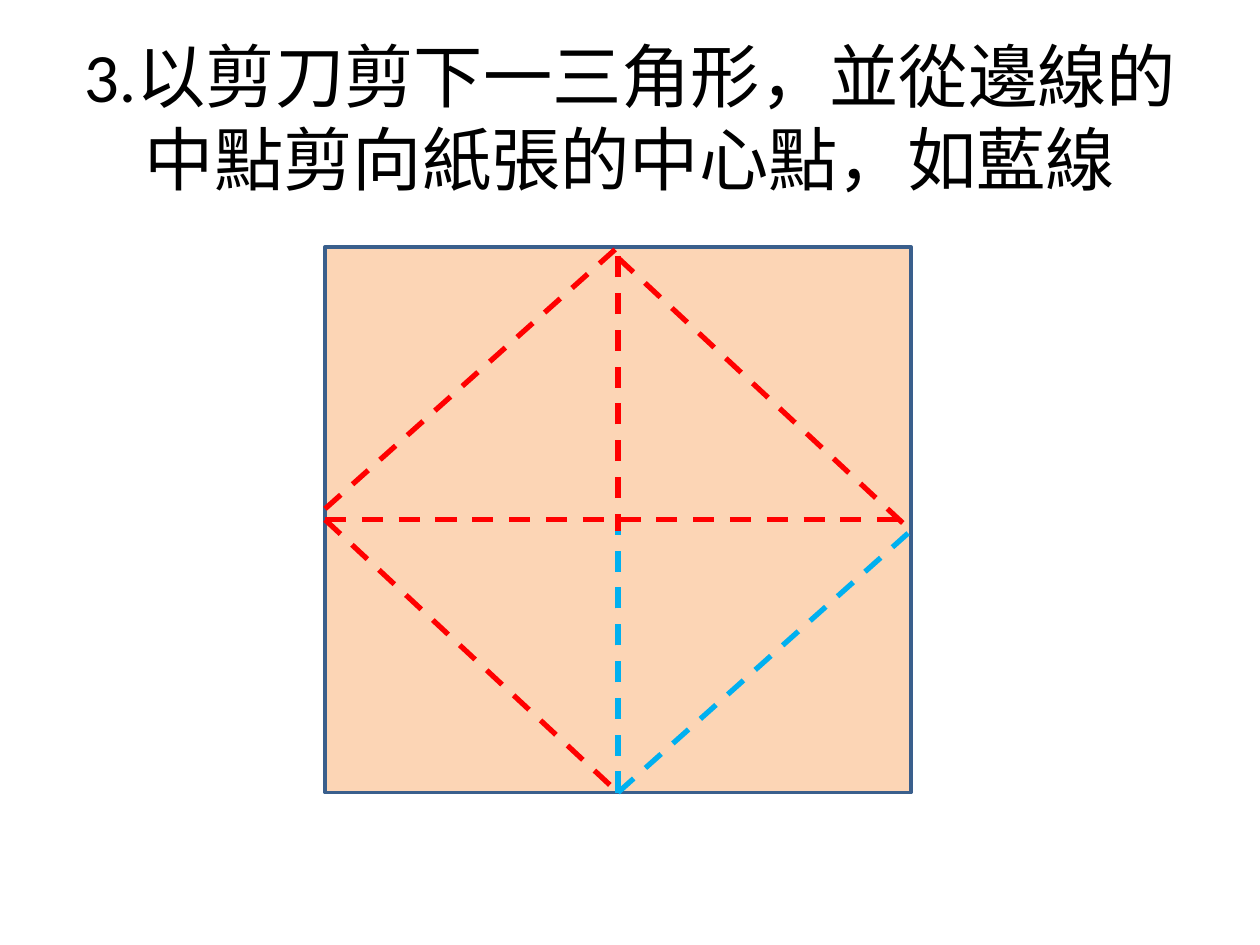
from dataclasses import dataclass
from typing import Optional

import pptx
import pptx.dml.color
import pptx.enum.dml
import pptx.enum.shapes
import pptx.enum.text
import pptx.oxml
import pptx.oxml.ns
import pptx.util

SLIDE_W, SLIDE_H = 10, 7.5
TOP, LEFT, BOTTOM, RIGHT = range(4)


@dataclass(frozen=True)
class Theme:
    font: str = "Calibri"
    title_size: float = 39.6
    text: str = "000000"
    paper: str = "FCD5B5"
    paper_edge: str = "3A5F8C"
    fold: str = "FF0000"
    cut: str = "00B0F0"
    edge_width: float = 2
    crease_width: float = 3


@dataclass(frozen=True)
class Area:
    """A rectangle in inches."""
    left: float
    top: float
    width: float
    height: float

    def emu(self) -> list:
        return [pptx.util.Inches(v) for v in (self.left, self.top, self.width, self.height)]

    def point(self, across: float, down: float) -> list:
        """The place at the given shares of the width and height."""
        return [pptx.util.Inches(self.left + across * self.width),
                pptx.util.Inches(self.top + down * self.height)]


@dataclass(frozen=True)
class Crease:
    """A dashed line between shares of the paper, joined to its sides where named."""
    start: tuple
    end: tuple
    color: str
    start_side: Optional[int] = None
    end_side: Optional[int] = None


THEME = Theme()
TITLE = "3.以剪刀剪下一三角形，並從邊線的中點剪向紙張的中心點，如藍線"
TITLE_AREA = Area(0.05 * SLIDE_W, 0.04 * SLIDE_H, 0.9 * SLIDE_W, SLIDE_H / 6)
PAPER_AREA = Area(2.58, 1.96, 4.65, 4.33)

MID = 0.5
NUDGE = 0.02  # some creases miss the side's middle by this share
TOP_MID, LEFT_MID, BOTTOM_MID, RIGHT_MID = (MID, 0), (0, MID), (MID, 1), (1, MID)
CREASES = [
    Crease(LEFT_MID, RIGHT_MID, THEME.fold, LEFT, RIGHT),
    Crease(BOTTOM_MID, TOP_MID, THEME.fold, BOTTOM, TOP),
    Crease(LEFT_MID, BOTTOM_MID, THEME.fold, LEFT, BOTTOM),
    Crease((MID, NUDGE), (1, MID + NUDGE), THEME.fold),
    Crease(BOTTOM_MID, (1, MID + NUDGE), THEME.cut, BOTTOM),
    Crease((0, MID - NUDGE), TOP_MID, THEME.fold, None, TOP),
    Crease(BOTTOM_MID, (MID, MID + NUDGE), THEME.cut, BOTTOM),
]


def rgb(value: str) -> pptx.dml.color.RGBColor:
    return pptx.dml.color.RGBColor.from_string(value)


def add_title(slide) -> None:
    frame = slide.shapes.add_textbox(*TITLE_AREA.emu()).text_frame
    for name, value in {"word_wrap": True,
                        "vertical_anchor": pptx.enum.text.MSO_ANCHOR.MIDDLE}.items():
        setattr(frame, name, value)
    paragraph = frame.paragraphs[0]
    paragraph.alignment = pptx.enum.text.PP_ALIGN.CENTER
    run = paragraph.add_run()
    run.text = TITLE
    for name, value in {"name": THEME.font,
                        "size": pptx.util.Pt(THEME.title_size)}.items():
        setattr(run.font, name, value)
    run.font.color.rgb = rgb(THEME.text)


def add_paper(shapes):
    paper = shapes.add_shape(pptx.enum.shapes.MSO_SHAPE.RECTANGLE, *PAPER_AREA.emu())
    paper.shadow.inherit = False
    paper.fill.solid()
    paper.fill.fore_color.rgb = rgb(THEME.paper)
    paper.line.color.rgb = rgb(THEME.paper_edge)
    paper.line.width = pptx.util.Pt(THEME.edge_width)
    return paper


def add_crease(shapes, paper, crease: Crease) -> None:
    line = shapes.add_connector(pptx.enum.shapes.MSO_CONNECTOR.STRAIGHT,
                                *PAPER_AREA.point(*crease.start),
                                *PAPER_AREA.point(*crease.end))
    if crease.start_side is not None:
        line.begin_connect(paper, crease.start_side)
    if crease.end_side is not None:
        line.end_connect(paper, crease.end_side)
    line.line.color.rgb = rgb(crease.color)
    for name, value in {"width": pptx.util.Pt(THEME.crease_width),
                        "dash_style": pptx.enum.dml.MSO_LINE.DASH}.items():
        setattr(line.line, name, value)
    properties = line._element.spPr
    properties.append(properties.makeelement(pptx.oxml.ns.qn("a:effectLst"), {}))


def main() -> None:
    deck = pptx.Presentation()
    deck.slide_width = pptx.util.Inches(SLIDE_W)
    deck.slide_height = pptx.util.Inches(SLIDE_H)
    slide = deck.slides.add_slide(deck.slide_layouts[6])
    add_title(slide)
    diagram = slide.shapes.add_group_shape().shapes
    paper = add_paper(diagram)
    for crease in CREASES:
        add_crease(diagram, paper, crease)
    deck.save("out.pptx")


if __name__ == "__main__":
    main()
